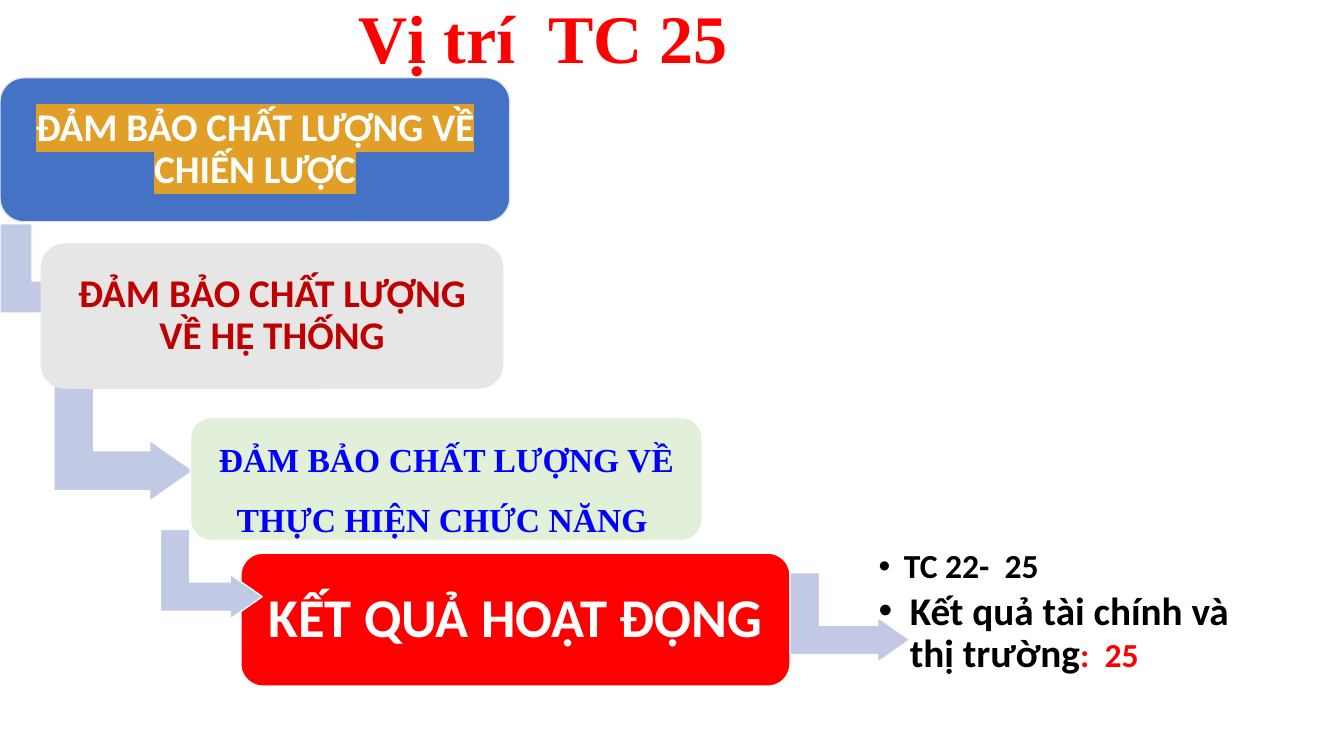
from lxml.etree import SubElement
from pptx import Presentation
from pptx.dml.color import RGBColor
from pptx.enum.shapes import MSO_SHAPE
from pptx.enum.text import MSO_ANCHOR, MSO_AUTO_SIZE, PP_ALIGN
from pptx.oxml import parse_xml
from pptx.oxml.ns import nsdecls, qn
from pptx.util import Cm, Pt


def colour(hex_text):
    return RGBColor.from_string(hex_text)


class StaircaseSlide:
    font_name = "Calibri"
    title_font = "Times New Roman"
    arrow_fill = "C1C9E4"
    arrow_adjustments = (0.328, 0.25, 0.358)

    def __init__(self, presentation):
        self.slide = presentation.slides.add_slide(presentation.slide_layouts[1])

    def place(self, shape, left, top, width, height):
        shape.left, shape.top = Cm(left), Cm(top)
        shape.width, shape.height = Cm(width), Cm(height)

    def frame(self, shape, margin):
        text_frame = shape.text_frame
        text_frame.word_wrap = True
        text_frame.auto_size = MSO_AUTO_SIZE.NONE
        text_frame.vertical_anchor = MSO_ANCHOR.MIDDLE
        text_frame.margin_left = text_frame.margin_right = Cm(margin)
        text_frame.margin_top = text_frame.margin_bottom = Cm(margin)
        return text_frame

    def paragraph(self, paragraph, alignment, line_spacing, space_after):
        paragraph.alignment = alignment
        paragraph.line_spacing = line_spacing
        paragraph.space_before = Pt(0)
        paragraph.space_after = Pt(space_after)

    def run(self, paragraph, text, size, hex_text, font_name=None, highlight=None):
        run = paragraph.add_run()
        run.text = text
        run.font.size = Pt(size)
        run.font.bold = True
        run.font.name = font_name or self.font_name
        run.font.color.rgb = colour(hex_text)
        if highlight:
            run.font._element.find(qn("a:solidFill")).addnext(parse_xml(
                f'<a:highlight {nsdecls("a")}><a:srgbClr val="{highlight}"/></a:highlight>'))

    def paint(self, shape, fill, line):
        shape.shadow.inherit = False
        shape.fill.solid()
        shape.fill.fore_color.rgb = colour(fill)
        shape.line.color.rgb = colour(line)
        shape.line.width = Pt(1)

    def title(self, text, box):
        shape = self.slide.shapes.title
        self.place(shape, *box)
        paragraph = self.frame(shape, 0.25).paragraphs[0]
        self.paragraph(paragraph, PP_ALIGN.LEFT, 0.9, 0)
        self.run(paragraph, text, 48.6, "FF0000", self.title_font)

    def bullets(self, items, box):
        shape = self.slide.placeholders[1]
        self.place(shape, *box)
        text_frame = self.frame(shape, 0.25)
        for index, (indent, runs) in enumerate(items):
            paragraph = text_frame.add_paragraph() if index else text_frame.paragraphs[0]
            self.paragraph(paragraph, PP_ALIGN.LEFT, 0.9, 4)
            properties = paragraph._p.get_or_add_pPr()
            properties.set("marL", str(Cm(indent)))
            properties.set("indent", str(-Cm(indent)))
            SubElement(properties, qn("a:buFont"), typeface="Arial")
            SubElement(properties, qn("a:buChar"), char="•")
            for text, size, hex_text in runs:
                self.run(paragraph, text, size, hex_text)

    def step(self, text, box, fill, line, size, hex_text, margin=0.3,
             line_spacing=0.9, space_after=10, font_name=None, highlight=None):
        shape = self.slide.shapes.add_shape(
            MSO_SHAPE.ROUNDED_RECTANGLE, *(Cm(value) for value in box))
        self.paint(shape, fill, line)
        paragraph = self.frame(shape, margin).paragraphs[0]
        self.paragraph(paragraph, PP_ALIGN.CENTER, line_spacing, space_after)
        self.run(paragraph, text, size, hex_text, font_name, highlight)

    def arrow(self, left, top, width, height):
        shift = (width - height) / 2
        shape = self.slide.shapes.add_shape(
            MSO_SHAPE.BENT_UP_ARROW,
            Cm(left + shift), Cm(top - shift), Cm(height), Cm(width))
        shape.rotation = 90
        for index, value in enumerate(self.arrow_adjustments):
            shape.adjustments[index] = value
        self.paint(shape, self.arrow_fill, "FFFFFF")


def main():
    presentation = Presentation()
    presentation.slide_width, presentation.slide_height = Cm(33.87), Cm(19.05)
    staircase = StaircaseSlide(presentation)

    staircase.title("Vị trí  TC 25", (8.79, 0, 13.49, 2.08))
    staircase.bullets([
        (0.64, [("TC 22-  25", 24, "000000")]),
        (0.79, [("Kết quả tài chính và thị trường", 28, "000000"),
                (":  25", 24, "FF0000")]),
    ], (21.89, 13.44, 9.83, 4.01))

    staircase.arrow(0, 5.64, 4.29, 2.46)
    staircase.step("ĐẢM BẢO CHẤT LƯỢNG VỀ CHIẾN LƯỢC", (0, 1.96, 12.85, 3.63),
                   "4472C4", "E7E6E6", 28, "FFFFFF", highlight="E19F27")
    staircase.arrow(1.36, 9.56, 3.51, 3.07)
    staircase.step("ĐẢM BẢO CHẤT LƯỢNG VỀ HỆ THỐNG", (1.04, 6.15, 11.63, 3.63),
                   "E7E6E6", "E7E6E6", 28, "C00000")
    staircase.step("ĐẢM BẢO CHẤT LƯỢNG VỀ THỰC HIỆN CHỨC NĂNG ",
                   (4.8, 10.52, 12.9, 3.1), "E2F0D9", "FFFFFF", 24, "0000FF",
                   margin=0.25, line_spacing=1.5, space_after=6,
                   font_name=staircase.title_font)
    staircase.step("KẾT QUẢ HOẠT ĐỘNG", (6.07, 13.94, 13.84, 3.35),
                   "FF0000", "FFFFFF", 39, "FFFFFF", margin=0.4, space_after=14)
    staircase.arrow(4.04, 13.34, 2.57, 2.26)
    staircase.arrow(19.91, 14.43, 3.02, 2.26)

    presentation.save("out.pptx")


if __name__ == "__main__":
    main()
